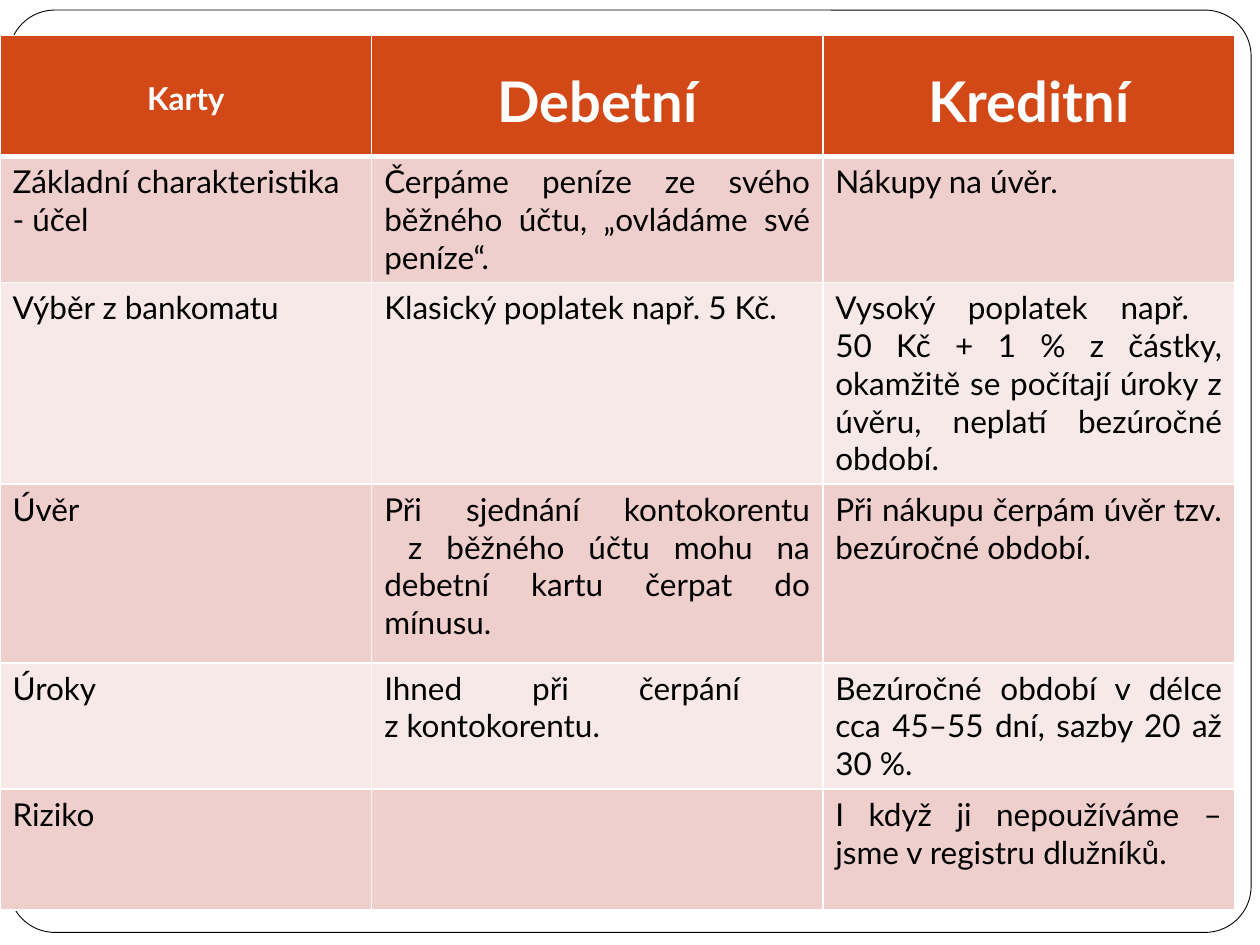
from pptx import Presentation
from pptx.dml.color import RGBColor
from pptx.enum.shapes import MSO_SHAPE as Shape
from pptx.enum.text import PP_ALIGN as Align
from pptx.oxml.ns import qn
from pptx.util import Inches, Pt
from lxml.etree import SubElement

COLORS = {
    "white": "FFFFFF",
    "black": "000000",
    "header": "D34817",
    "odd_row": "EFCFCC",
    "even_row": "F7E9E8",
}
COLUMN_WIDTHS = [2.95, 3.58, 3.27]
ROW_HEIGHTS = [0.96, 0.96, 1.42, 1.42, 0.96, 0.96]
COLUMN_ALIGNS = [Align.LEFT, Align.JUSTIFY, Align.JUSTIFY]

# Header text, size in points, top margin in inches
HEADERS = [("Karty", 18, 0.35), ("Debetní", 32, 0.25), ("Kreditní", 32, 0.25)]
ROWS = [
    ("Základní charakteristika - účel",
     "Čerpáme peníze ze svého běžného účtu, „ovládáme své peníze“.",
     "Nákupy na úvěr."),
    ("Výběr z bankomatu",
     "Klasický poplatek např. 5 Kč.",
     "Vysoký poplatek např. \n50 Kč + 1 % z částky, okamžitě se počítají "
     "úroky z úvěru, neplatí bezúročné období."),
    ("Úvěr",
     "Při sjednání kontokorentu\n z běžného účtu mohu na debetní kartu "
     "čerpat do mínusu.",
     "Při nákupu čerpám úvěr tzv. bezúročné období."),
    ("Úroky",
     "Ihned při čerpání \nz kontokorentu.",
     "Bezúročné období v délce cca 45–55 dní, sazby 20 až 30 %."),
    ("Riziko",
     "",
     "I když ji nepoužíváme – jsme v registru dlužníků."),
]


def rgb(name):
    return RGBColor.from_string(COLORS[name])


class SlideBuilder:
    def __init__(self, slide, font_name):
        self.slide = slide
        self.font_name = font_name

    def frame(self, left, top, width, height):
        box = self.slide.shapes.add_shape(
            Shape.ROUNDED_RECTANGLE,
            Inches(left), Inches(top), Inches(width), Inches(height))
        box.adjustments[0] = 0.05
        box.shadow.inherit = False
        box.fill.solid()
        box.fill.fore_color.rgb = rgb("white")
        box.line.color.rgb = rgb("black")
        box.line.width = Pt(0.5)

    def table(self, left, top, height, widths, heights):
        table = self.slide.shapes.add_table(
            len(heights), len(widths), Inches(left), Inches(top),
            Inches(sum(widths)), Inches(height)).table
        for column, width in zip(table.columns, widths):
            column.width = Inches(width)
        for row, row_height in zip(table.rows, heights):
            row.height = Inches(row_height)
        return table

    def borders(self, cell, **widths):
        """Draw white borders; keys are L, R, T and B, in that order."""
        properties = cell._tc.get_or_add_tcPr()
        for side, width in widths.items():
            line = SubElement(properties, qn(f"a:ln{side}"), w=str(Pt(width)))
            fill = SubElement(line, qn("a:solidFill"))
            SubElement(fill, qn("a:srgbClr"), val=COLORS["white"])

    def cell(self, cell, text, fill, color, align, **font_values):
        cell.fill.solid()
        cell.fill.fore_color.rgb = rgb(fill)
        para = cell.text_frame.paragraphs[0]
        para.alignment = align
        if text:
            para.text = text
        for span in para.runs:
            span.font.color.rgb = rgb(color)
            for key, value in {"name": self.font_name, **font_values}.items():
                setattr(span.font, key, value)


def main():
    deck = Presentation()
    deck.slide_width, deck.slide_height = Inches(10), Inches(7.5)
    page = deck.slides.add_slide(deck.slide_layouts[6])
    builder = SlideBuilder(page, "Lato")

    builder.frame(0.07, 0.08, 9.86, 7.32)
    cards = builder.table(0, 0.28, 6.95, COLUMN_WIDTHS, ROW_HEIGHTS)

    for column, (text, size, margin) in enumerate(HEADERS):
        cell = cards.cell(0, column)
        cell.margin_top = Inches(margin)
        builder.borders(cell, L=1, R=1, T=1, B=3)
        builder.cell(cell, text, "header", "white", Align.CENTER,
                     size=Pt(size), bold=True)

    for row, texts in enumerate(ROWS, start=1):
        fill = "odd_row" if row % 2 else "even_row"
        for column, text in enumerate(texts):
            cell = cards.cell(row, column)
            builder.borders(cell, L=1, R=1, T=3 if row == 1 else 1, B=1)
            builder.cell(cell, text, fill, "black", COLUMN_ALIGNS[column],
                         size=Pt(18), bold=False)

    deck.save("out.pptx")


if __name__ == "__main__":
    main()
